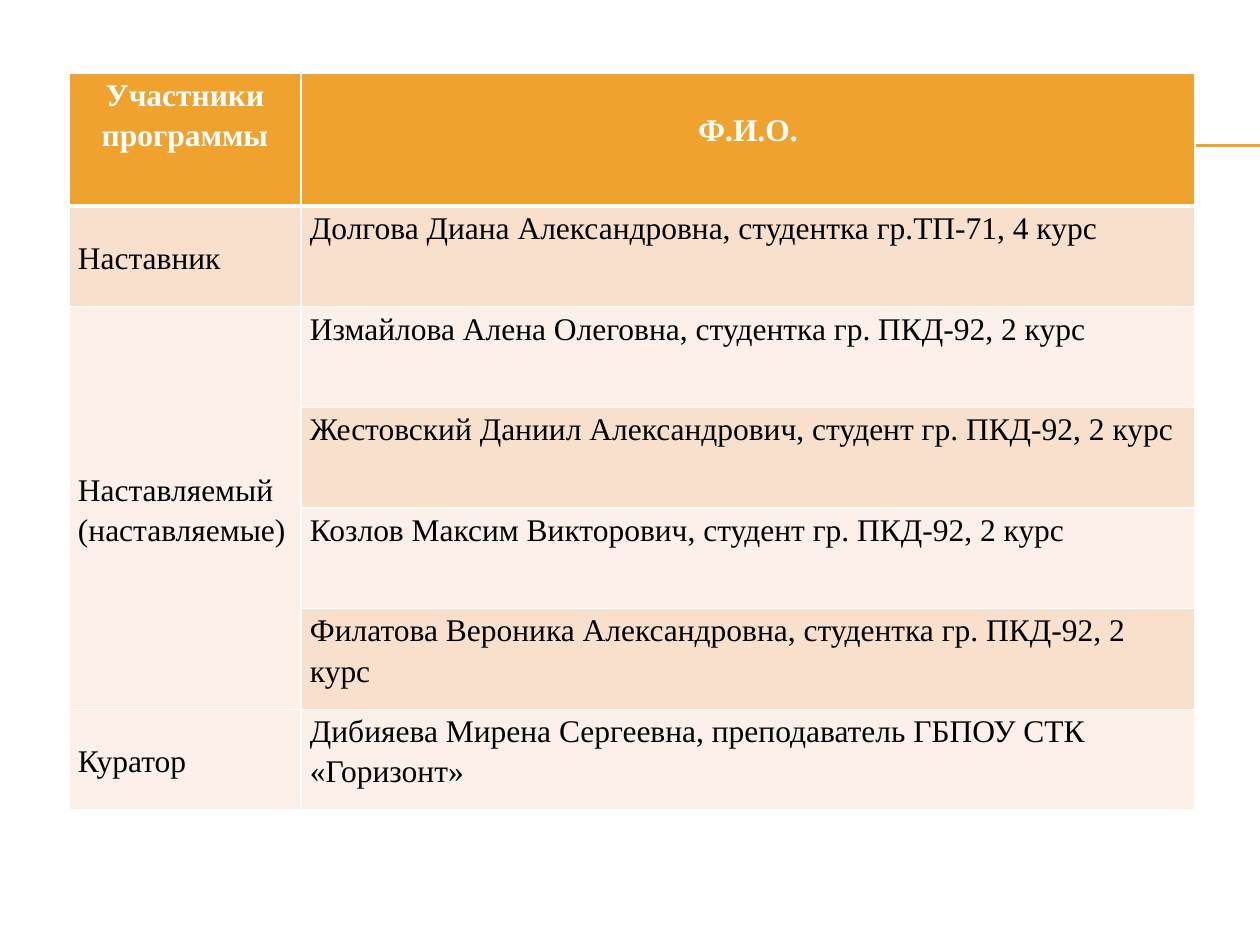
from lxml import etree
from pptx import Presentation
from pptx.dml.color import RGBColor
from pptx.enum.shapes import MSO_CONNECTOR
from pptx.enum.text import MSO_ANCHOR, PP_ALIGN
from pptx.oxml.ns import qn
from pptx.util import Pt

STRAIGHT = MSO_CONNECTOR.STRAIGHT
TOP, MIDDLE = MSO_ANCHOR.TOP, MSO_ANCHOR.MIDDLE
LEFT, CENTER = PP_ALIGN.LEFT, PP_ALIGN.CENTER

# Content: each role with the people in it
HEADERS = ["Участники программы", "Ф.И.О."]
GROUPS = [
    ("Наставник", ["Долгова Диана Александровна, студентка гр.ТП-71, 4 курс"]),
    ("Наставляемый\n(наставляемые)", [
        "Измайлова Алена Олеговна, студентка гр. ПКД-92, 2 курс",
        "Жестовский Даниил Александрович, студент гр. ПКД-92, 2 курс",
        "Козлов Максим Викторович, студент гр. ПКД-92, 2 курс",
        "Филатова Вероника Александровна, студентка гр. ПКД-92, 2 курс",
    ]),
    ("Куратор", ["Дибияева Мирена Сергеевна, преподаватель ГБПОУ СТК «Горизонт»"]),
]

# Layout in px
SCALE = 914400 / 126
PAGE_W, PAGE_H = 1260, 945
TABLE_X, TABLE_Y = 69, 73
COLUMNS = [232, 894]
HEADER_H, BODY_H = 133, 604
SIDE_MARGIN = 9
HEADER_DROP = 35
RULE_X, RULES_Y = 70, [145, 146]

FONT = "Times New Roman"
ORANGE, WHITE, BLACK = "F0A22E", "FFFFFF", "000000"
BANDS = ["F9E0CD", "FCF0E8"]


def px(value):
    return round(value * SCALE)


def color(value):
    return RGBColor.from_string(value)


def set_borders(cell, bottom):
    properties = cell._tc.get_or_add_tcPr()
    widths = [("a:lnL", 1), ("a:lnR", 1), ("a:lnT", 1), ("a:lnB", bottom)]
    for index, (tag, width) in enumerate(widths):
        line = etree.Element(qn(tag), w=str(Pt(width)))
        fill = etree.SubElement(line, qn("a:solidFill"))
        etree.SubElement(fill, qn("a:srgbClr"), val=WHITE)
        properties.insert(index, line)


def write_cell(cell, text, fill, ink=BLACK, bold=False, align=LEFT,
               anchor=TOP, drop=0, bottom=1):
    cell.fill.solid()
    cell.fill.fore_color.rgb = color(fill)
    cell.margin_left = cell.margin_right = px(SIDE_MARGIN)
    cell.margin_top, cell.margin_bottom = px(drop), 0
    cell.vertical_anchor = anchor
    cell.text_frame.text = text
    for para in cell.text_frame.paragraphs:
        para.alignment = align
        para.line_spacing = 1.15
        for span in para.runs:
            span.font.name = FONT
            span.font.size = Pt(18)
            span.font.bold = bold
            span.font.color.rgb = color(ink)
    set_borders(cell, bottom)


deck = Presentation()
deck.slide_width, deck.slide_height = px(PAGE_W), px(PAGE_H)
page = deck.slides.add_slide(deck.slide_layouts[6])

# Double rule behind the table
for y in RULES_Y:
    rule = page.shapes.add_connector(STRAIGHT, px(RULE_X), px(y), px(PAGE_W), px(y))
    rule.line.color.rgb = color(ORANGE)
    rule.line.width = Pt(0.75)
    etree.SubElement(rule._element.spPr, qn("a:effectLst"))

# Table grid
body_rows = sum(len(people) for role, people in GROUPS)
table = page.shapes.add_table(
    body_rows + 1, len(COLUMNS), px(TABLE_X), px(TABLE_Y),
    px(sum(COLUMNS)), px(HEADER_H + BODY_H)).table
for column, width in zip(table.columns, COLUMNS):
    column.width = px(width)
for index, row in enumerate(table.rows):
    row.height = px(BODY_H / body_rows if index else HEADER_H)

# Header row
for index, (text, drop) in enumerate(zip(HEADERS, [0, HEADER_DROP])):
    write_cell(table.cell(0, index), text, ORANGE, ink=WHITE, bold=True,
               align=CENTER, drop=drop, bottom=3)

# Roles, each merged over its people
first = 1
for role, people in GROUPS:
    for offset, person in enumerate(people):
        band = BANDS[(first + offset - 1) % 2]
        write_cell(table.cell(first + offset, 0), "" if offset else role,
                   BANDS[(first - 1) % 2], anchor=MIDDLE)
        write_cell(table.cell(first + offset, 1), person, band)
    if len(people) > 1:
        table.cell(first, 0).merge(table.cell(first + len(people) - 1, 0))
    first += len(people)

deck.save("out.pptx")
